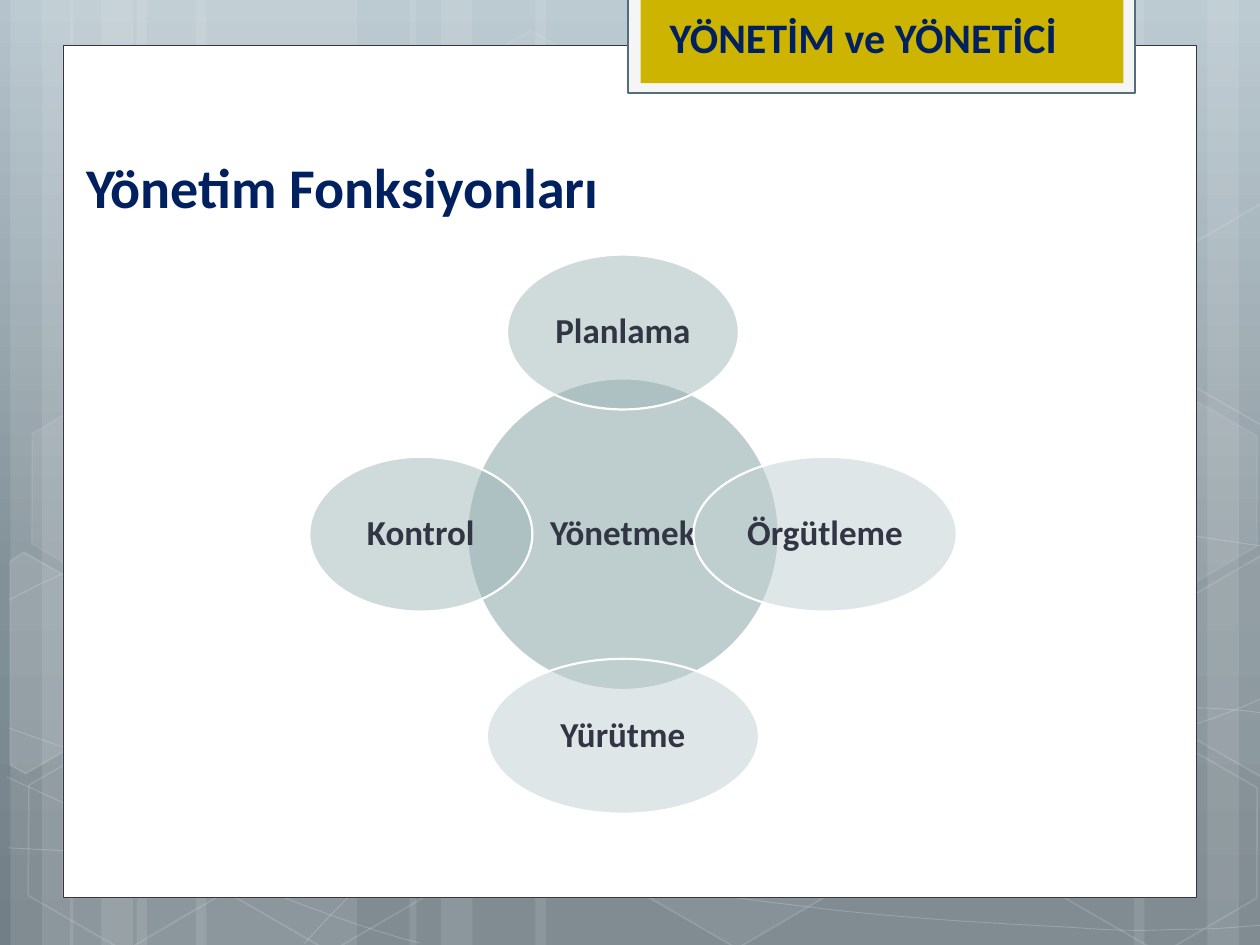
import math
from copy import deepcopy

from lxml import etree
from pptx import Presentation
from pptx.dml.color import RGBColor
from pptx.enum import shapes, text
from pptx.oxml.ns import qn
from pptx.util import Pt

WHITE = RGBColor(0xFF, 0xFF, 0xFF)
PALE = RGBColor(0xF5, 0xF5, 0xF5)
NAVY = RGBColor(0x00, 0x20, 0x60)
INK = RGBColor(0x32, 0x35, 0x43)
STEEL = RGBColor(0x54, 0x6D, 0x7A)
MUSTARD = RGBColor(0xCC, 0xB4, 0x00)
HUB = RGBColor(0x7F, 0x9D, 0x9E)
SAGE = RGBColor(0xA0, 0xB6, 0xB7)
MIST = RGBColor(0xC0, 0xCF, 0xD0)
SKY = [(0, RGBColor(0xB5, 0xC4, 0xCC)), (0.62, RGBColor(0x82, 0x90, 0x97)),
       (1, RGBColor(0x72, 0x7F, 0x86))]

FONT = "Calibri"
TILT = 30
RECT = shapes.MSO_SHAPE.RECTANGLE
OVAL = shapes.MSO_SHAPE.OVAL
HEXAGON = shapes.MSO_SHAPE.HEXAGON

# Left and width of the full-height light bands
STRIPES = [(78, 126), (6, 36), (24, 60), (112, 126), (40, 36), (58, 60),
           (528, 126), (690, 36), (648, 60), (306, 222), (234, 36), (252, 60)]

# Start point, then two control points and an end point for each segment
CURVES = [
    [(5, 484.5), (44, 486.5), (83, 489), (137, 488), (191, 487), (258, 486), (330, 479),
     (402, 472), (504, 458), (570, 444), (636, 431), (703, 409), (725, 397)],
    [(5, 343), (26, 332), (47, 321), (87, 310), (128, 300), (186, 284), (250, 279),
     (314, 274), (392, 273), (471, 279), (550, 284), (682, 307), (725, 312.5)],
    [(4, 444), (91, 484), (178, 523), (240, 539)],
    [(5, 416), (27, 424), (50, 432), (92, 443.5), (134, 454), (197, 472), (257, 484.5),
     (317, 497), (392, 510), (452, 517), (512, 525), (576, 528), (614, 530),
     (652, 533), (662, 531), (680, 531), (699, 531), (712, 529), (725, 528.5)],
    [(174, 539), (187, 525), (200, 510), (217, 497.5), (235, 485), (259, 470), (279, 460),
     (300, 450), (312, 446), (338, 438.5), (364, 431), (413, 421), (438, 416),
     (464, 411), (467, 411), (490, 409.5), (512, 407.5), (547, 405), (572, 404.5),
     (597, 404), (638, 404.5), (638, 404.5), (654, 404.5), (670, 404.5), (686, 404.5),
     (699, 405), (711, 406), (718, 407), (724, 407.5), (722, 407), (724, 407.5)],
]

# Left, top, fill opacity and line opacity in percent
HEXAGONS = [(240.5, 26, 4, 8), (358, 424, 6, 12), (8, 425.5, 0, 12), (10, 224.5, 7, 8),
            (125.5, 426, 0, 12), (542, 326, 10, 12), (600.5, 427, 0, 12), (600.5, 226, 7, 8)]

# Hexagons cut off at the slide edge: centre, corners as seen, fill opacity
LEFT_CUT = [(5.75, 320.5), (13.5, 315.5), (69, 347), (68.5, 410.5), (14.5, 442), (5.75, 437)]
RIGHT_CUT = [(666.5, 349), (720.5, 317.5), (726.5, 321), (726.5, 441.5), (721.5, 444),
             (666.5, 412.5)]
CUT_HEXAGONS = [((26, 385), LEFT_CUT, 10), ((709, 374.5), RIGHT_CUT, 4),
                ((709, 173.5), [(x, y - 201) for x, y in RIGHT_CUT], 0)]

# Label, direction from the hub, width, colour
FUNCTIONS = [("Planlama", (0, -1), 132.5, SAGE), ("Örgütleme", (1, 0), 150.5, MIST),
             ("Yürütme", (0, 1), 155.5, MIST), ("Kontrol", (-1, 0), 127.5, SAGE)]


def set_opacity(fill_parent, percent):
    color = fill_parent.find(qn("a:solidFill")).find(qn("a:srgbClr"))
    if percent < 100:
        etree.SubElement(color, qn("a:alpha")).set("val", str(percent * 1000))


def style(shape, fill=None, opacity=100, line=None, weight=1, line_opacity=100):
    shape.shadow.inherit = False
    if fill is None or opacity == 0:
        shape.fill.background()
    else:
        shape.fill.solid()
        shape.fill.fore_color.rgb = fill
        set_opacity(shape._element.spPr, opacity)
    if line is None:
        shape.line.fill.background()
    else:
        shape.line.color.rgb = line
        shape.line.width = Pt(weight)
        set_opacity(shape._element.spPr.find(qn("a:ln")), line_opacity)


def add_preset(page, kind, left, top, width, height, **look):
    shape = page.shapes.add_shape(kind, Pt(left), Pt(top), Pt(width), Pt(height))
    style(shape, **look)
    return shape


def add_outline(page, points, closed, **look):
    corners = [(Pt(x), Pt(y)) for x, y in points]
    builder = page.shapes.build_freeform(*corners[0])
    builder.add_line_segments(corners[1:], close=closed)
    shape = builder.convert_to_shape()
    style(shape, **look)
    return shape


def add_curve(page, knots, **look):
    """Draw the knots as an outline, then join every three of them into a Bézier segment."""
    shape = add_outline(page, knots, False, **look)
    lines = list(shape._element.iter(qn("a:lnTo")))
    for i in range(0, len(lines), 3):
        segment = etree.Element(qn("a:cubicBezTo"))
        lines[i].addprevious(segment)
        for line in lines[i:i + 3]:
            segment.append(line[0])
            line.getparent().remove(line)


def turn_back(points, center):
    cos, sin = math.cos(math.radians(TILT)), math.sin(math.radians(TILT))
    cx, cy = center
    return [(cx + (x - cx) * cos + (y - cy) * sin, cy - (x - cx) * sin + (y - cy) * cos)
            for x, y in points]


def write(shape, words, size, color, align, anchor):
    frame = shape.text_frame
    frame.word_wrap = True
    frame.vertical_anchor = anchor
    para = frame.paragraphs[0]
    para.alignment = align
    span = para.add_run()
    span.text = words
    span.font.name = FONT
    span.font.size = Pt(size)
    span.font.bold = True
    span.font.color.rgb = color
    return para


def paint_background(page):
    fill = page.background.fill
    fill.gradient()
    fill.gradient_angle = 270
    stops = page._element.find(".//" + qn("a:gsLst"))
    stops.append(deepcopy(stops[-1]))
    for stop, (position, color) in zip(fill.gradient_stops, SKY):
        stop.position = position
        stop.color.rgb = color


def add_decoration(page):
    for left, width in STRIPES:
        add_preset(page, RECT, left, 0, width, 540, fill=WHITE, opacity=10)
    for knots in CURVES:
        add_curve(page, knots, line=WHITE, weight=0.5, line_opacity=20)
    for left, top, opacity, line_opacity in HEXAGONS:
        hexagon = add_preset(page, HEXAGON, left, top, 126, 109.5, fill=WHITE,
                             opacity=opacity, line=WHITE, line_opacity=line_opacity)
        hexagon.adjustments[0] = 0.285
        hexagon.rotation = TILT
    for center, points, opacity in CUT_HEXAGONS:
        piece = add_outline(page, turn_back(points, center), True, fill=WHITE,
                            opacity=opacity, line=WHITE, line_opacity=12)
        piece.rotation = TILT


def add_header(page):
    add_preset(page, RECT, 359, -1.5, 289.5, 54.5, fill=PALE, line=STEEL, weight=1.25)
    add_preset(page, RECT, 366, -1.5, 276, 49, fill=MUSTARD)
    box = page.shapes.add_textbox(Pt(375.6), Pt(3), Pt(251.3), Pt(72.7))
    write(box, "YÖNETİM ve YÖNETİCİ", 24, NAVY, text.PP_ALIGN.LEFT, text.MSO_ANCHOR.TOP)


def add_title(page):
    title = page.shapes.title
    title.left, title.top, title.width, title.height = Pt(37), Pt(78), Pt(644.5), Pt(51)
    para = write(title, "Yönetim Fonksiyonları", 32, NAVY,
                 text.PP_ALIGN.LEFT, text.MSO_ANCHOR.BOTTOM)
    para._p.get_or_add_pPr().set("marL", str(Pt(5)))
    page.shapes._spTree.append(title._element)  # bring in front of the panel


def add_bubble(page, words, center_x, center_y, width, height, color):
    bubble = add_preset(page, OVAL, center_x - width / 2, center_y - height / 2, width, height,
                        fill=color, opacity=50, line=WHITE, weight=1.25)
    frame = bubble.text_frame
    frame.margin_left = frame.margin_right = frame.margin_top = frame.margin_bottom = Pt(2)
    para = write(bubble, words, 20, INK, text.PP_ALIGN.CENTER, text.MSO_ANCHOR.MIDDLE)
    para.line_spacing = 0.9


def add_diagram(page, center_x=356, center_y=305.25, reach=115.5):
    add_bubble(page, "Yönetmek", center_x, center_y, 178, 178, HUB)
    for words, (dx, dy), width, color in FUNCTIONS:
        add_bubble(page, words, center_x + dx * reach, center_y + dy * reach, width, 88.5, color)


def main():
    deck = Presentation()
    deck.slide_width, deck.slide_height = Pt(720), Pt(540)
    page = deck.slides.add_slide(deck.slide_layouts[5])

    # Backdrop and white panel
    paint_background(page)
    add_decoration(page)
    add_preset(page, RECT, 36, 26, 648, 487, fill=WHITE, line=INK, weight=0.5)

    # Content
    add_header(page)
    add_title(page)
    add_diagram(page)
    deck.save("out.pptx")


if __name__ == "__main__":
    main()
